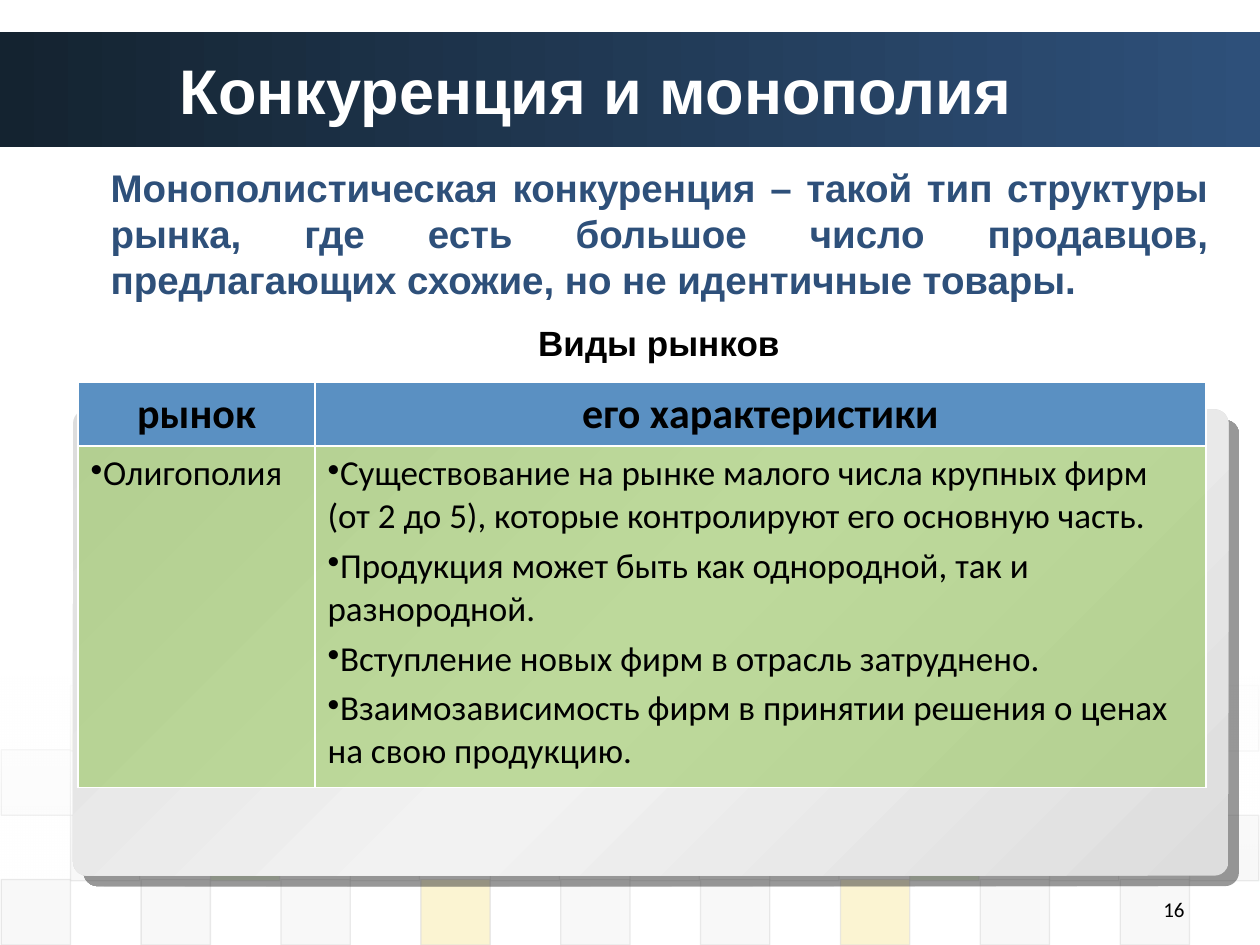
from lxml.etree import SubElement
from pptx import Presentation
from pptx.dml.color import RGBColor
from pptx.enum.shapes import MSO_SHAPE
from pptx.enum.text import MSO_ANCHOR, PP_ALIGN
from pptx.oxml.ns import qn
from pptx.util import Inches, Pt

COLORS = {
    "navy": "2E507A", "dark": "142330", "white": "FFFFFF", "black": "000000",
    "blue": "5A90C2", "green": "8AC246", "yellow": "EFC821", "gray": "DDDDDD",
    "pale": "EAEAEA", "light": "F2F2F2", "shadow": "333333",
}
TILE_KEYS = {"G": "green", "Y": "yellow", "D": "gray", "E": "pale"}
TILE_ROWS = [
    (0.56, 5.44, 5, "YEEYDYEGE"),
    (0.01, 5.95, 10, "DDDDGDDDY"),
    (0.56, 6.47, 20, "DGDDDDGDD"),
    (0.01, 6.98, 20, "DDDYDDYDD"),
]
MARKET = ["Олигополия"]
FEATURES = [
    "Существование на рынке малого числа крупных фирм (от 2 до 5), "
    "которые контролируют его основную часть.",
    "Продукция может быть как однородной, так и разнородной.",
    "Вступление новых фирм в отрасль затруднено.",
    "Взаимозависимость фирм в принятии решения о ценах на свою продукцию.",
]


def rgb(name):
    return RGBColor.from_string(COLORS[name])


def add_color(parent, name, opacity=100):
    clr = SubElement(parent, qn("a:srgbClr"), val=COLORS[name])
    if opacity < 100:
        SubElement(clr, qn("a:alpha"), val=str(opacity * 1000))


class SlideBuilder:
    """Holds the style and the current slide, and draws each kind of element."""

    def __init__(self, slide):
        self.s = slide
        self.heading_font = "Arial"
        self.body_font = "Calibri"

    def shape(self, box, kind=MSO_SHAPE.RECTANGLE):
        sp = self.s.shapes.add_shape(kind, *map(Inches, box))
        sp.shadow.inherit = False
        return sp

    def tile(self, box, color, opacity):
        sp = self.shape(box)
        sp.fill.solid()
        sp.fill.fore_color.rgb = rgb(color)
        sp.line.color.rgb = rgb("gray")
        sp.line.width = Pt(0.75)
        fill, line = sp._element.spPr.iter(qn("a:srgbClr"))
        SubElement(fill, qn("a:alpha"), val=str(opacity * 1000))
        SubElement(line, qn("a:alpha"), val="60000")

    def gradient(self, box, stops, angle, kind=MSO_SHAPE.RECTANGLE):
        sp = self.shape(box, kind)
        sp.line.fill.background()
        grad = SubElement(sp._element.spPr, qn("a:gradFill"), rotWithShape="1")
        sp._element.spPr.find(qn("a:prstGeom")).addnext(grad)
        gs_list = SubElement(grad, qn("a:gsLst"))
        for pos, color, opacity in stops:
            gs = SubElement(gs_list, qn("a:gs"), pos=str(pos * 1000))
            add_color(gs, color, opacity)
        SubElement(grad, qn("a:lin"), ang=str(angle * 60000), scaled="0")
        return sp

    def panel(self, box):
        stops = [(0, "gray", 100), (50, "light", 100), (100, "gray", 100)]
        sp = self.gradient(box, stops, 45, MSO_SHAPE.ROUNDED_RECTANGLE)
        sp.adjustments[0] = 0.03
        effects = sp._element.spPr.find(qn("a:effectLst"))
        shadow = SubElement(effects, qn("a:outerShdw"), blurRad="0",
                            dist=str(Pt(8.5)), dir="2700000",
                            algn="ctr", rotWithShape="0")
        add_color(shadow, "shadow", 50)

    def style(self, p, size, color, font, bold, align):
        p.alignment = align
        p.font.size = Pt(size)
        p.font.name = font
        p.font.bold = bold
        p.font.color.rgb = rgb(color)

    def text(self, box, text, size, color="black", font=None, bold=True,
             align=PP_ALIGN.CENTER, anchor=MSO_ANCHOR.TOP):
        tf = self.s.shapes.add_textbox(*map(Inches, box)).text_frame
        tf.word_wrap = True
        tf.vertical_anchor = anchor
        p = tf.paragraphs[0]
        p.text = text
        self.style(p, size, color, font or self.heading_font, bold, align)

    def cell(self, cell, lines, header):
        tc_pr = cell._tc.get_or_add_tcPr()
        for side in ("lnL", "lnR", "lnT", "lnB"):
            ln = SubElement(tc_pr, qn(f"a:{side}"), w=str(Pt(1)))
            add_color(SubElement(ln, qn("a:solidFill")), "white")
        cell.fill.solid()
        cell.fill.fore_color.rgb = rgb("blue" if header else "green")
        if not header:
            clr = tc_pr.find(qn("a:solidFill")).find(qn("a:srgbClr"))
            SubElement(clr, qn("a:alpha"), val="50000")
        cell.vertical_anchor = MSO_ANCHOR.MIDDLE if header else MSO_ANCHOR.TOP
        tf = cell.text_frame
        for i, line in enumerate(lines):
            p = tf.add_paragraph() if i else tf.paragraphs[0]
            p.text = line
            if i:
                p.space_before = Pt(4)
            if not header:
                SubElement(p._p.get_or_add_pPr(), qn("a:buChar"), char="•")
            self.style(p, 24 if header else 20, "black", self.body_font, header,
                       PP_ALIGN.CENTER if header else PP_ALIGN.LEFT)

    def table(self, box, widths, heights, rows):
        table = self.s.shapes.add_table(
            len(rows), len(widths), *map(Inches, box)).table
        for col, width in zip(table.columns, widths):
            col.width = Inches(width)
        for row, height in zip(table.rows, heights):
            row.height = Inches(height)
        for r, row in enumerate(rows):
            for c, lines in enumerate(row):
                self.cell(table.cell(r, c), lines, r == 0)


def main():
    prs = Presentation()
    prs.slide_width, prs.slide_height = Inches(10), Inches(7.5)
    b = SlideBuilder(prs.slides.add_slide(prs.slide_layouts[6]))

    b.gradient((0, 0.25, 10, 0.92), [(0, "dark", 100), (100, "navy", 100)], 0)
    for left, top, opacity, keys in TILE_ROWS:
        for i, key in enumerate(keys):
            b.tile((left + 1.11 * i, top, 0.55, 0.52), TILE_KEYS[key], opacity)
    b.gradient((0, 5.37, 10, 1.62), [(0, "white", 90), (100, "white", 0)], 90)
    b.panel((0.58, 3.25, 9.17, 3.7))

    b.text((1.33, 0.25, 8.08, 0.92), "Конкуренция и монополия", 36, "white",
           align=PP_ALIGN.LEFT, anchor=MSO_ANCHOR.MIDDLE)
    b.table((0.62, 3.03, 8.95, 3.22), (1.88, 7.07), (0.51, 2.71),
            [(["рынок"], ["его характеристики"]), (MARKET, FEATURES)])
    b.text((0.78, 1.25, 8.91, 1.21),
           "Монополистическая конкуренция – такой тип структуры рынка, "
           "где есть большое число продавцов, предлагающих схожие, "
           "но не идентичные товары.", 22, "navy", align=PP_ALIGN.JUSTIFY)
    b.text((7.17, 7.07, 2.33, 0.33), "16", 12, font=b.body_font, bold=False,
           align=PP_ALIGN.RIGHT)
    b.text((2.73, 2.5, 5, 0.44), "Виды рынков", 20)

    prs.save("out.pptx")


if __name__ == "__main__":
    main()
